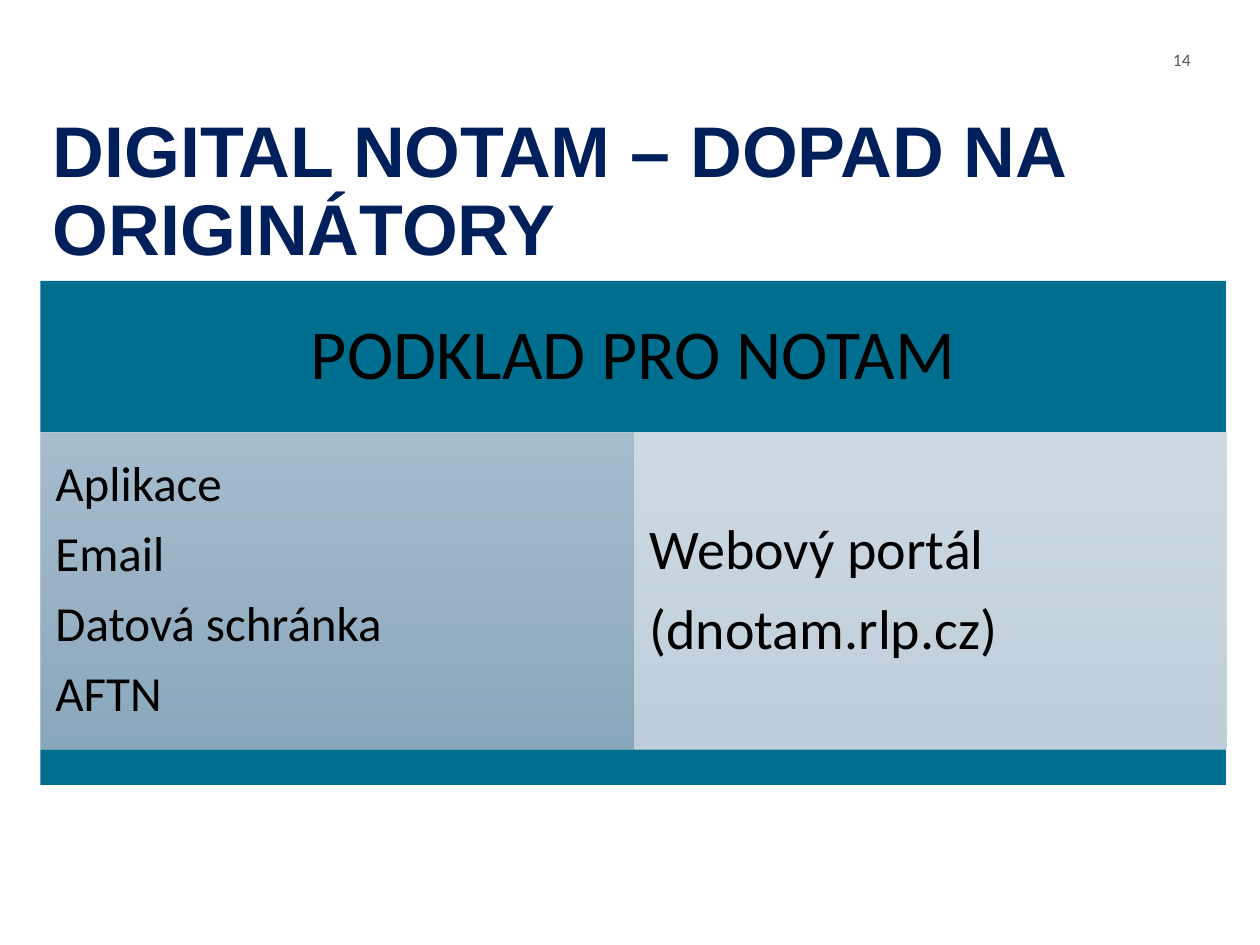
import pptx
import pptx.util
from lxml import etree
from pptx.dml.color import RGBColor
from pptx.enum.shapes import MSO_SHAPE
from pptx.enum.text import MSO_ANCHOR, MSO_AUTO_SIZE, PP_ALIGN
from pptx.oxml.ns import qn
from pptx.util import Inches

COLORS = {
    "title": "00205B",
    "band": "006E8F",
    "text": "000000",
    "number": "5A5A5A",
    "panel_top": "9DB7C9",
    "panel_middle": "90ABBE",
    "panel_bottom": "7C9FB5",
}
LEFT, WIDTH = 0.32, 9.41
HEADER_HEIGHT, PANEL_HEIGHT, FOOTER_HEIGHT = 1.2, 2.52, 0.28


def write_text(frame, lines, size, color, font="Calibri", bold=False,
               align=PP_ALIGN.LEFT, line_spacing=0.9, space_after=0):
    frame.word_wrap = True
    for index, line in enumerate(lines):
        paragraph = frame.add_paragraph() if index else frame.paragraphs[0]
        paragraph.alignment = align
        paragraph.line_spacing = line_spacing
        paragraph.space_before = pptx.util.Pt(0)
        paragraph.space_after = pptx.util.Pt(space_after)
        run = paragraph.add_run()
        run.text = line
        run.font.name = font
        run.font.size = pptx.util.Pt(size)
        run.font.bold = bold
        run.font.color.rgb = RGBColor.from_string(COLORS[color])


def set_insets(frame, horizontal, vertical):
    frame.margin_left = frame.margin_right = Inches(horizontal)
    frame.margin_top = frame.margin_bottom = Inches(vertical)


def add_block(slide, left, top, width, height):
    """Add a rectangle without line or shadow."""
    shape = slide.shapes.add_shape(MSO_SHAPE.RECTANGLE, Inches(left), Inches(top),
                                   Inches(width), Inches(height))
    shape.shadow.inherit = False
    shape.line.fill.background()
    return shape


def add_band(slide, left, top, width, height):
    shape = add_block(slide, left, top, width, height)
    shape.fill.solid()
    shape.fill.fore_color.rgb = RGBColor.from_string(COLORS["band"])
    return shape


def fill_gradient(shape, opacity):
    """Fill from top to bottom with three equally see-through stops."""
    shape.fill.gradient()
    shape.fill.gradient_angle = 270
    stops = shape._element.spPr.find(qn("a:gradFill")).find(qn("a:gsLst"))
    for stop in list(stops):
        stops.remove(stop)
    for position, name in ((0, "panel_top"), (50, "panel_middle"), (100, "panel_bottom")):
        stop = etree.SubElement(stops, qn("a:gs"), pos=str(position * 1000))
        color = etree.SubElement(stop, qn("a:srgbClr"), val=COLORS[name])
        etree.SubElement(color, qn("a:alpha"), val=str(opacity * 1000))


def fill_block(shape, lines, size, inset, align=PP_ALIGN.LEFT):
    frame = shape.text_frame
    set_insets(frame, inset, inset)
    frame.vertical_anchor = MSO_ANCHOR.MIDDLE
    write_text(frame, lines, size, "text", align=align, space_after=round(size * 0.35, 1))


def add_title(slide, left, top, width, height):
    title = slide.shapes.title
    title.left, title.top = Inches(left), Inches(top)
    title.width, title.height = Inches(width), Inches(height)
    frame = title.text_frame
    frame.auto_size = MSO_AUTO_SIZE.NONE
    frame.vertical_anchor = MSO_ANCHOR.TOP
    write_text(frame, ["DIGITAL NOTAM – DOPAD NA ORIGINÁTORY"], 41, "title",
               font="Arial", bold=True)


def add_page_number(slide, left, top, width, height):
    box = slide.shapes.add_textbox(Inches(left), Inches(top), Inches(width), Inches(height))
    set_insets(box.text_frame, 0, 0.05)
    write_text(box.text_frame, ["14"], 10, "number", line_spacing=1.0)


def add_sources(slide, left, top, width):
    """Stack a header band, two panels side by side and a footer band."""
    header = add_band(slide, left, top, width, HEADER_HEIGHT)
    fill_block(header, ["PODKLAD PRO NOTAM"], 40, 0.17, PP_ALIGN.CENTER)

    panels = [
        (["Aplikace", "Email", "Datová schránka", "AFTN"], 28, 0.12, 90),
        (["Webový portál", "(dnotam.rlp.cz)"], 32, 0.13, 50),
    ]
    panel_top = top + HEADER_HEIGHT
    panel_width = width / len(panels)
    for index, (lines, size, inset, opacity) in enumerate(panels):
        panel = add_block(slide, left + index * panel_width, panel_top,
                          panel_width, PANEL_HEIGHT)
        fill_gradient(panel, opacity)
        fill_block(panel, lines, size, inset)

    add_band(slide, left, panel_top + PANEL_HEIGHT, width, FOOTER_HEIGHT)


def main():
    presentation = pptx.Presentation()
    presentation.slide_width, presentation.slide_height = Inches(10), Inches(7.5)
    slide = presentation.slides.add_slide(presentation.slide_layouts[5])
    add_page_number(slide, 9.31, 0.34, 0.64, 0.27)
    add_title(slide, LEFT, 0.87, WIDTH, 1.36)
    add_sources(slide, LEFT, 2.23, WIDTH)
    presentation.save("out.pptx")


if __name__ == "__main__":
    main()
